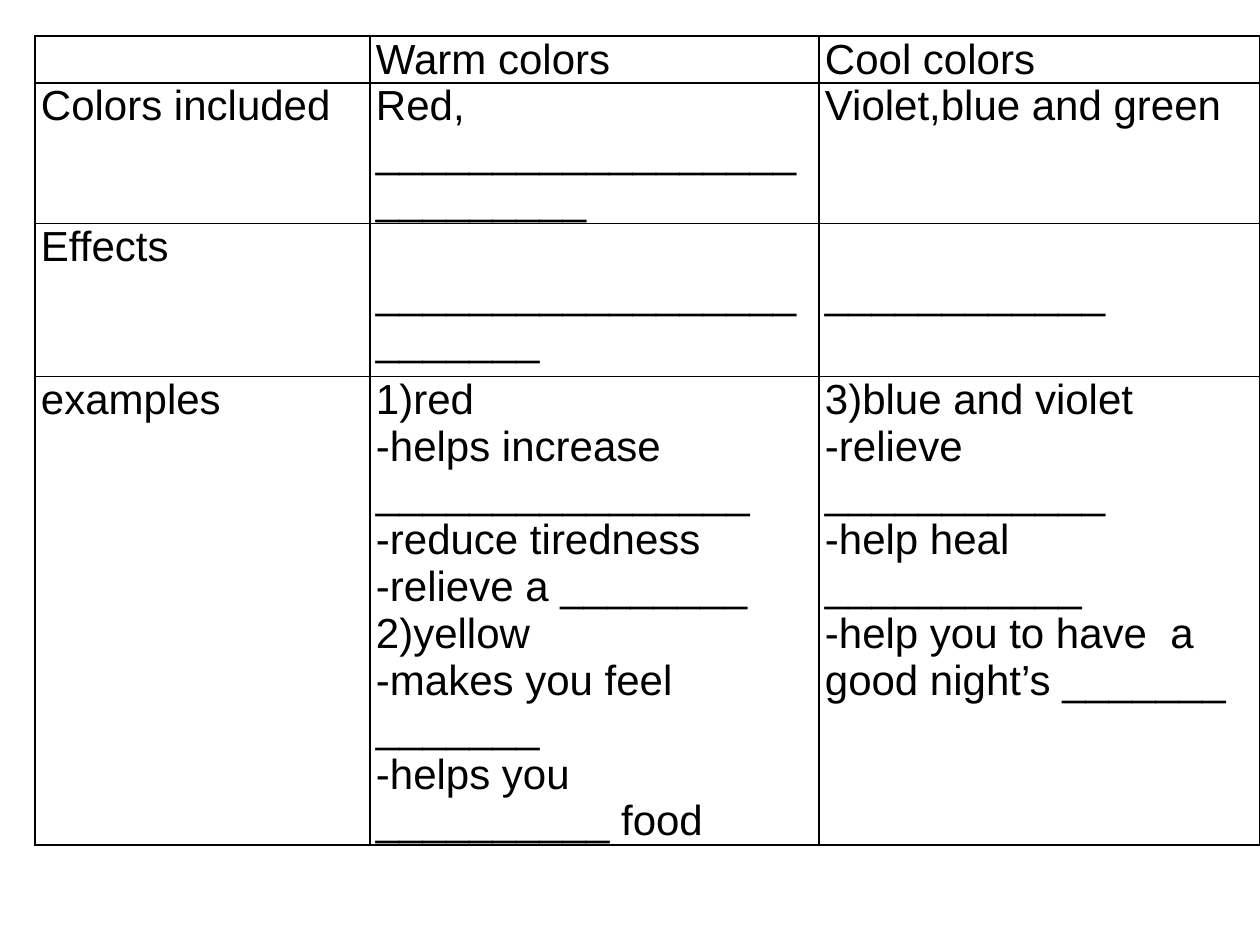
import pptx
import pptx.dml.color
import pptx.oxml
import pptx.oxml.ns
import pptx.util

EMU_PER_PX = 914400 // 126
FONT = "Arial"
BLACK = "000000"
LINE_H = 47  # one line of 24 pt text
COLUMNS = [335, 449, 441]
ROWS = [47, 140, 153, 468]

# Each cell is a list of paragraphs
CELLS = [
    [[], ["Warm colors"], ["Cool colors"]],
    [["Colors included"], ["Red, " + "_" * 27], ["Violet,blue and green"]],
    [["Effects"], ["_" * 25], ["_" * 12]],
    [
        ["examples"],
        [
            "1)red",
            "-helps increase ________________",
            "-reduce tiredness",
            "-relieve a ________",
            "2)yellow",
            "-makes you feel _______",
            "-helps you __________ food",
        ],
        [
            "3)blue and violet",
            "-relieve ____________",
            "-help heal ___________",
            "-help you to have  a good night’s _______",
        ],
    ],
]


def px(n):
    return pptx.util.Emu(n * EMU_PER_PX)


def color(hex_string):
    return pptx.dml.color.RGBColor.from_string(hex_string)


def set_borders(cell, hex_string, width):
    tc_pr = cell._tc.get_or_add_tcPr()
    for side in ("lnL", "lnR", "lnT", "lnB"):
        tc_pr.append(pptx.oxml.parse_xml(
            f'<a:{side} {pptx.oxml.ns.nsdecls("a")} w="{width}">'
            f'<a:solidFill><a:srgbClr val="{hex_string}"/></a:solidFill>'
            f'</a:{side}>'))


def fill_cell(cell, lines, top):
    set_borders(cell, BLACK, pptx.util.Pt(1))
    cell.fill.background()
    cell.margin_left = cell.margin_right = px(6)
    cell.margin_top, cell.margin_bottom = px(top), 0
    tf = cell.text_frame
    for i, line in enumerate(lines):
        p = tf.add_paragraph() if i else tf.paragraphs[0]
        r = p.add_run()
        r.text = line
        r.font.name = FONT
        r.font.size = pptx.util.Pt(24)
        r.font.color.rgb = color(BLACK)


def add_grid(s, left, top):
    frame = s.shapes.add_table(len(ROWS), len(COLUMNS), px(left), px(top),
                               px(sum(COLUMNS)), px(sum(ROWS)))
    table = frame.table
    table.first_row = table.horz_banding = False
    for column, width in zip(table.columns, COLUMNS):
        column.width = px(width)
    for row, height, row_cells in zip(table.rows, ROWS, CELLS):
        row.height = px(height)
        for cell, lines in zip(row.cells, row_cells):
            # Blanks to fill in under "Effects" start one line down
            is_blank = bool(lines) and not lines[0].strip("_")
            fill_cell(cell, lines, LINE_H if is_blank else 0)


def main():
    prs = pptx.Presentation()
    prs.slide_width, prs.slide_height = px(1260), px(945)
    s = prs.slides.add_slide(prs.slide_layouts[6])

    # Comparison of warm and cool colors
    add_grid(s, 35, 36)

    prs.save("out.pptx")


if __name__ == "__main__":
    main()
